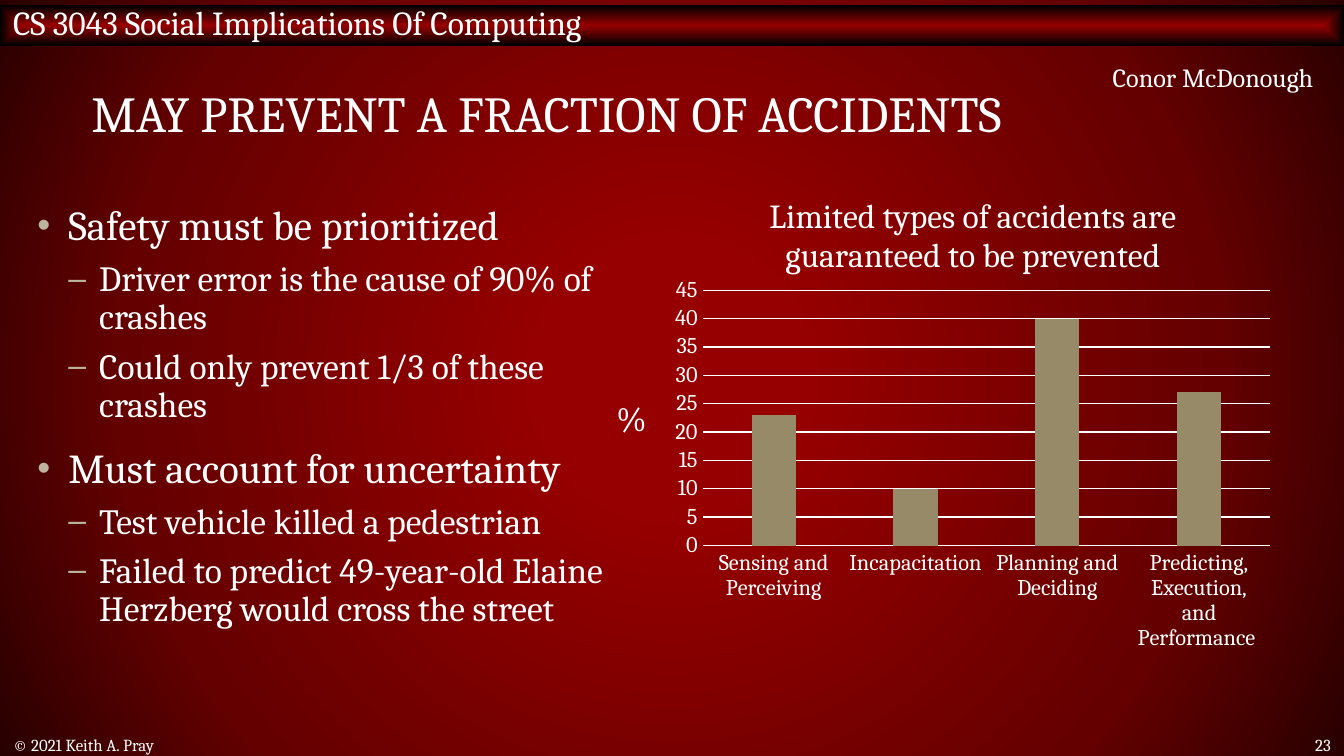
from lxml import etree
from pptx import Presentation
from pptx.chart.data import CategoryChartData
from pptx.dml.color import RGBColor as RGB
from pptx.enum.chart import XL_CHART_TYPE as Kind, XL_TICK_MARK as Tick
from pptx.enum.shapes import MSO_SHAPE as Shape
from pptx.enum.text import MSO_ANCHOR as Anchor, PP_ALIGN as Align
from pptx.oxml import parse_xml
from pptx.oxml.ns import nsdecls, qn
from pptx.util import Inches, Pt

# Content
COURSE = "CS 3043 Social Implications Of Computing"
TITLE = "MAY PREVENT A FRACTION OF ACCIDENTS"
POINTS = [
    (0, "Safety must be prioritized"),
    (1, "Driver error is the cause of 90% of crashes"),
    (1, "Could only prevent 1/3 of these crashes"),
    (0, "Must account for uncertainty"),
    (1, "Test vehicle killed a pedestrian"),
    (1, "Failed to predict 49-year-old Elaine Herzberg would cross the street"),
]
CHART = "Limited types of accidents are guaranteed to be prevented"
CAUSES = {
    "Sensing and Perceiving": 23,
    "Incapacitation": 10,
    "Planning and Deciding": 40,
    "Predicting, Execution, and Performance ": 27,
}

# Theme
THEME = {
    "font": "Cambria", "text": RGB(255, 255, 255),
    "bar": RGB(0x96, 0x8A, 0x68), "mark": "BCB49E",
    "back": [(17, "960000"), (71, "650000"), (100, "290000")],
    "band": [(0, "960000"), (100, "000000")],
    "title": 27, "head": 18, "name": 14, "axis": 12, "foot": 9,
}
# Per outline level: size, space before, bullet
LEVELS = [(22, 12, "•"), (19, 6, "–")]
STEP = 0.23


def style(font, size):
    font.name = THEME["font"]
    font.size = Pt(size)
    font.bold = False
    font.color.rgb = THEME["text"]


def write(shape, text, size, align=Align.LEFT, anchor=Anchor.MIDDLE):
    frame = shape.text_frame
    frame.word_wrap = True
    frame.vertical_anchor = anchor
    frame.text = text
    para = frame.paragraphs[0]
    para.alignment = align
    style(para.font, size)
    return para


def add_text(slide, box, *args):
    return write(slide.shapes.add_textbox(*map(Inches, box)), *args)


def blend(fill, path, stops):
    """Turn a fill into a gradient that spreads from the centre."""
    fill.gradient()
    grad = fill._fill._gradFill
    for child in list(grad):
        grad.remove(child)
    marks = "".join(f'<a:gs pos="{at * 1000}"><a:srgbClr val="{color}"/></a:gs>'
                    for at, color in stops)
    grad.append(parse_xml(f'<a:gsLst {nsdecls("a")}>{marks}</a:gsLst>'))
    grad.append(parse_xml(
        f'<a:path {nsdecls("a")} path="{path}"><a:fillToRect '
        'l="50000" t="50000" r="50000" b="50000"/></a:path>'))


def add_bullet(para, level, sign):
    props = para._p.get_or_add_pPr()
    props.set("marL", str(Inches(STEP * (level + 1))))
    props.set("indent", str(-Inches(STEP)))
    color = etree.SubElement(props, qn("a:buClr"))
    etree.SubElement(color, qn("a:srgbClr"), val=THEME["mark"])
    etree.SubElement(props, qn("a:buSzPct"), val="90000")
    etree.SubElement(props, qn("a:buFont"), typeface="Arial")
    etree.SubElement(props, qn("a:buChar"), char=sign)


def add_points(slide, box):
    frame = slide.shapes.add_textbox(*map(Inches, box)).text_frame
    frame.word_wrap = True
    for i, (level, text) in enumerate(POINTS):
        size, gap, sign = LEVELS[level]
        para = frame.add_paragraph() if i else frame.paragraphs[0]
        para.text = text
        para.level = level
        add_bullet(para, level, sign)
        para.line_spacing = 0.9
        para.space_before = Pt(gap if i else 0)
        style(para.font, size)


def add_chart(slide, box, inner):
    data = CategoryChartData()
    data.categories = list(CAUSES)
    data.add_series("Series 1", list(CAUSES.values()))
    chart = slide.shapes.add_chart(
        Kind.COLUMN_CLUSTERED, *map(Inches, box), data).chart
    style(chart.font, THEME["axis"])
    chart.has_legend = False
    chart.has_title = True
    frame = chart.chart_title.text_frame
    frame.text = CHART
    style(frame.paragraphs[0].font, THEME["head"])

    # Columns
    plot = chart.plots[0]
    plot.vary_by_categories = False
    plot.gap_width = 219
    plot.overlap = -27
    fill = plot.series[0].format.fill
    fill.solid()
    fill.fore_color.rgb = THEME["bar"]

    # Axes
    cat, val = chart.category_axis, chart.value_axis
    for axis in (cat, val):
        axis.major_tick_mark = axis.minor_tick_mark = Tick.NONE
        style(axis.tick_labels.font, THEME["axis"])
    val.minimum_scale, val.maximum_scale, val.major_unit = 0, 45, 5
    val.format.line.fill.background()
    val.has_major_gridlines = True
    for line in (cat.format.line, val.major_gridlines.format.line):
        line.color.rgb = THEME["text"]
        line.width = Pt(0.75)

    # Plot area: inches turned into shares of the chart
    area = chart._chartSpace.chart.plotArea
    for old in area.findall(qn("c:layout")):
        area.remove(old)
    sides = "".join(f'<c:{key} val="{part / whole}"/>'
                    for key, part, whole in zip("xywh", inner, box[2:] * 2))
    area.insert(0, parse_xml(
        f'<c:layout {nsdecls("c")}><c:manualLayout>'
        '<c:layoutTarget val="inner"/><c:xMode val="edge"/><c:yMode val="edge"/>'
        f'{sides}</c:manualLayout></c:layout>'))


def main():
    deck = Presentation()
    deck.slide_width = Inches(10)
    deck.slide_height = deck.slide_width * 9 // 16
    slide = deck.slides.add_slide(deck.slide_layouts[5])
    blend(slide.background.fill, "circle", THEME["back"])

    # Course band
    band = slide.shapes.add_shape(
        Shape.RECTANGLE, *map(Inches, (0, 0.04, 10, 0.3)))
    band.shadow.inherit = False
    band.line.fill.background()
    blend(band.fill, "shape", THEME["band"])
    band.text_frame.margin_top = 0
    write(band, COURSE, THEME["head"])

    # Title
    title = slide.shapes.title
    title.left, title.top, title.width, title.height = map(
        Inches, (0.58, 0.38, 8.5, 1))
    write(title, TITLE, THEME["title"]).line_spacing = 0.8

    # Body, footer and speaker
    add_points(slide, (0.18, 1.48, 4.66, 3.67))
    add_text(slide, (0, 5.46, 6.08, 0.16), "© 2021 Keith A. Pray", THEME["foot"])
    add_text(slide, (9.32, 5.46, 0.68, 0.16), "23", THEME["foot"], Align.RIGHT)
    add_text(slide, (7.49, 0.41, 2.38, 0.34), "Conor McDonough",
             THEME["name"], Align.RIGHT, Anchor.TOP)

    # Chart and its unit
    add_chart(slide, (4.83, 1.23, 4.82, 5.52), (0.4, 0.93, 4.22, 1.9))
    add_text(slide, (4.49, 2.91, 0.65, 0.4), "%",
             THEME["head"], Align.LEFT, Anchor.TOP)
    deck.save("out.pptx")


if __name__ == "__main__":
    main()
